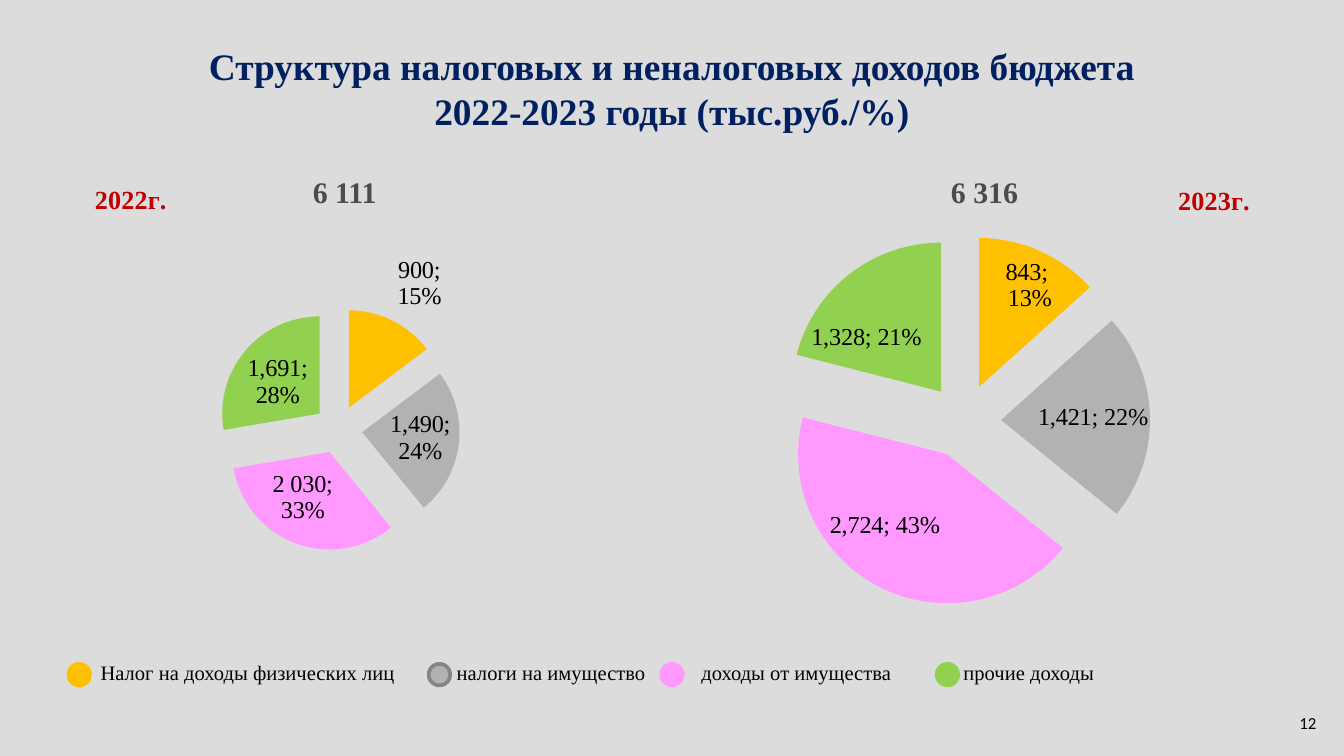
from lxml import etree
from pptx import Presentation
from pptx.chart.data import CategoryChartData
from pptx.dml.color import RGBColor
from pptx.enum.chart import XL_CHART_TYPE, XL_LABEL_POSITION
from pptx.enum.shapes import MSO_SHAPE
from pptx.enum.text import MSO_ANCHOR, PP_ALIGN
from pptx.oxml import parse_xml
from pptx.oxml.ns import nsdecls, qn
from pptx.util import Inches, Pt

PIE = XL_CHART_TYPE.PIE
MID = XL_LABEL_POSITION.CENTER
DOT = MSO_SHAPE.FLOWCHART_CONNECTOR
CENTER, LEFT = PP_ALIGN.CENTER, PP_ALIGN.LEFT
MIDDLE, TOP = MSO_ANCHOR.MIDDLE, MSO_ANCHOR.TOP

BACK = RGBColor(0xDC, 0xDC, 0xDC)
NAVY = RGBColor(0x00, 0x20, 0x60)
RED = RGBColor(0xC0, 0x00, 0x00)
DARK = RGBColor(0x4B, 0x4B, 0x4B)
BLACK = RGBColor(0x00, 0x00, 0x00)
GOLD = RGBColor(0xFF, 0xC0, 0x00)
GRAY = RGBColor(0xB2, 0xB2, 0xB2)
EDGE = RGBColor(0x85, 0x85, 0x85)
PINK = RGBColor(0xFF, 0x99, 0xFF)
GREEN = RGBColor(0x92, 0xD0, 0x50)
HUES = [GOLD, GRAY, PINK, GREEN]

SERIF = "Times New Roman"
HEAD = {"name": SERIF, "size": Pt(20), "bold": True}
YEAR = {"name": SERIF, "size": Pt(14), "bold": True}
TOTAL = {"name": SERIF, "size": Pt(16), "bold": True}
LABEL = {"name": SERIF, "size": Pt(13), "bold": False}
KEY = {"name": SERIF, "size": Pt(11)}
PAGE = {"name": "Calibri", "size": Pt(9)}

PIES = [
    {"box": (0.67, 1.32, 3.62, 3.32), "year": "2022г.",
     "vals": (900, 1490, 2030, 1691), "spot": (0, 0),
     "plot": (0.26, 0.29, 0.5, 0.55),
     "shift": ((0.1, -0.18), (0.02, 0), (-0.02, 0), (-0.01, 0)),
     "notes": {0: "900;\n15%", 2: "2 030;\n33%"}},
    {"box": (5.31, 1.08, 4.33, 3.54), "year": "2023г.",
     "vals": (843, 1421, 2724, 1328), "spot": (0.79, 0.07),
     "plot": (0.11, 0.16, 0.64, 0.84),
     "shift": ((0.03, -0.07), (0.03, 0), (-0.05, 0.01), (-0.05, 0.01)),
     "notes": {0: "843;\n 13%"}},
]
KEYS = [
    ("Налог на доходы физических лиц", 0.51, 0.75, GOLD),
    ("налоги на имущество", 3.19, 3.4, EDGE),
    ("доходы от имущества", 4.92, 5.22, PINK),
    ("прочие доходы", 6.97, 7.17, GREEN),
]


def style(font, looks, hue):
    for name, value in looks.items():
        setattr(font, name, value)
    font.color.rgb = hue


def add_text(slide, box, text, looks, hue, align=LEFT, anchor=TOP, wrap=True):
    frame = slide.shapes.add_textbox(*map(Inches, box)).text_frame
    frame.word_wrap = wrap
    frame.vertical_anchor = anchor
    line = frame.paragraphs[0]
    line.text = text
    line.alignment = align
    for run in line.runs:
        style(run.font, looks, hue)
    return line


def layout(spot, size=(), edge=False):
    target = '<c:layoutTarget val="inner"/>' if size else ""
    modes = '<c:xMode val="edge"/><c:yMode val="edge"/>' if edge else ""
    parts = "".join(f'<c:{tag} val="{num}"/>'
                    for tag, num in zip("xywh", (*spot, *size)))
    return parse_xml(f'<c:layout {nsdecls("c")}><c:manualLayout>{target}{modes}'
                     f'{parts}</c:manualLayout></c:layout>')


def clear(node, tag):
    for old in node.findall(qn(tag)):
        node.remove(old)


def place_title(chart, text, spot):
    title = chart.chart_title
    title.text_frame.text = text
    style(title.text_frame.paragraphs[0].runs[0].font, YEAR, RED)
    node = title._element
    clear(node, "c:layout")
    node.find(qn("c:tx")).addnext(layout(spot, edge=True))
    title.include_in_layout = False


def show_share(node):
    node.find(qn("c:showPercent")).set("val", "1")
    clear(node, "c:separator")
    mark = etree.Element(qn("c:separator"))
    mark.text = "; "
    node.find(qn("c:showBubbleSize")).addnext(mark)


def place_label(point, shift, note):
    label = point.data_label
    if note:
        label.text_frame.text = note
        for line in label.text_frame.paragraphs:
            style(line.runs[0].font, LABEL, BLACK)
    else:
        style(label.font, LABEL, BLACK)
    label.position = MID
    node = label._dLbl
    node.find(qn("c:idx")).addnext(layout(shift))
    show_share(node)


def add_pie(slide, pie):
    data = CategoryChartData(number_format="#,##0")
    data.categories = ["1", "2", "3", "4"]
    data.add_series(pie["year"], pie["vals"])
    chart = slide.shapes.add_chart(PIE, *map(Inches, pie["box"]), data).chart
    chart.has_legend = False
    style(chart.font, {"name": "Calibri", "size": Pt(18)}, BLACK)
    place_title(chart, pie["year"], pie["spot"])

    plot = chart.plots[0]
    plot.vary_by_categories = True
    area = chart._chartSpace.chart.plotArea
    clear(area, "c:layout")
    area.insert(0, layout(pie["plot"][:2], pie["plot"][2:], True))

    series = plot.series[0]
    labels = series.data_labels
    style(labels.font, LABEL, BLACK)
    labels.show_value = True
    labels.show_percentage = True
    labels.position = MID
    for spot, (hue, shift) in enumerate(zip(HUES, pie["shift"])):
        point = series.points[spot]
        point.format.fill.solid()
        point.format.fill.fore_color.rgb = hue
        place_label(point, shift, pie["notes"].get(spot))
    node = labels._element
    show_share(node)
    clear(node, "c:showLeaderLines")
    lead = etree.Element(qn("c:showLeaderLines"), val="0")
    node.find(qn("c:separator")).addnext(lead)
    burst = etree.Element(qn("c:explosion"), val="25")
    series._element.find(qn("c:dPt")).addprevious(burst)


def add_dot(slide, left, hue, edge):
    dot = slide.shapes.add_shape(DOT, *map(Inches, (left, 4.94, 0.16, 0.16)))
    dot.shadow.inherit = False
    dot.fill.solid()
    dot.fill.fore_color.rgb = hue
    dot.line.color.rgb = edge
    dot.line.width = Pt(2)


def add_keys(slide):
    left = 0.28
    text = "".join("\t" + key[0] for key in KEYS)
    line = add_text(slide, (left, 4.86, 9.53, 0.29), text, KEY, BLACK)
    stops = etree.SubElement(line._p.get_or_add_pPr(), qn("a:tabLst"))
    for (_, dot, start, edge), hue in zip(KEYS, HUES):
        place = Inches(start - left - 0.1)
        etree.SubElement(stops, qn("a:tab"), pos=str(place), algn="l")
        add_dot(slide, dot, hue, edge)


def main():
    deck = Presentation()
    deck.slide_width = Inches(10)
    deck.slide_height = deck.slide_width * 9 // 16
    slide = deck.slides.add_slide(deck.slide_layouts[6])
    slide.background.fill.solid()
    slide.background.fill.fore_color.rgb = BACK
    add_text(slide, (0.5, 0.23, 9, 0.85),
             "Структура налоговых и неналоговых доходов бюджета\v"
             "2022-2023 годы (тыс.руб./%)", HEAD, NAVY, CENTER, MIDDLE)
    for pie in PIES:
        add_pie(slide, pie)
    add_keys(slide)
    add_text(slide, (1.54, 1.24, 2.05, 0.37), "6 111", TOTAL, DARK, CENTER)
    add_text(slide, (6.5, 1.24, 1.65, 0.37), "6 316", TOTAL, DARK, CENTER)
    add_text(slide, (9.57, 5.25, 0.33, 0.25), "12", PAGE, BLACK, wrap=False)
    deck.save("out.pptx")


if __name__ == "__main__":
    main()
